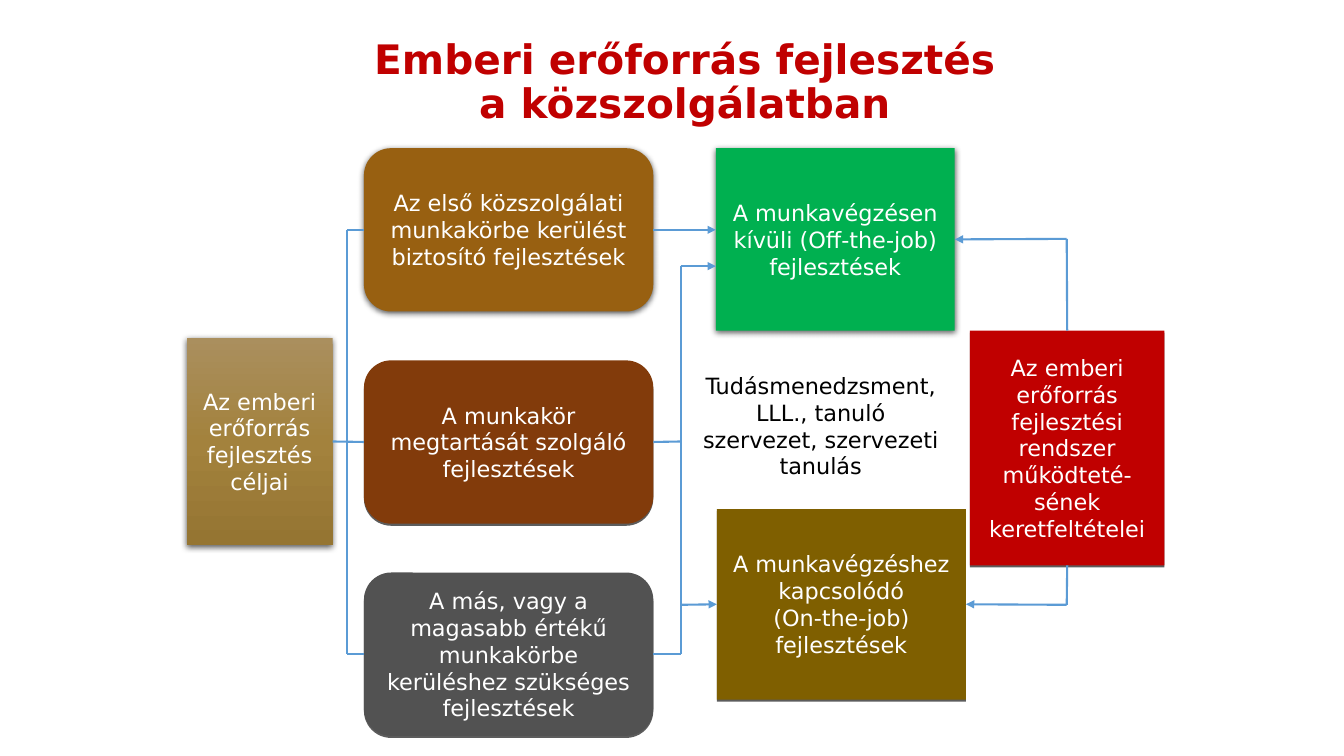
from lxml import etree
from pptx import Presentation
from pptx.dml.color import RGBColor
from pptx.enum import shapes, text
from pptx.oxml import ns
from pptx.util import Inches, Pt

FONT = "DejaVu Sans"
WHITE, BLACK, RED, BLUE = "FFFFFF", "000000", "C00000", "5B9BD5"
RECT = shapes.MSO_SHAPE.RECTANGLE
ROUNDED = shapes.MSO_SHAPE.ROUNDED_RECTANGLE
TOP, LEFT, BOTTOM, RIGHT = range(4)


def color(value):
    return RGBColor.from_string(value)


def add_child(parent, tag, **attributes):
    return etree.SubElement(parent, ns.qn(tag), attributes)


def write(shape, lines, size=16, ink=WHITE, bold=False, spacing=None,
          anchor=text.MSO_ANCHOR.MIDDLE):
    frame = shape.text_frame
    frame.word_wrap = True
    frame.vertical_anchor = anchor
    frame.text = lines
    for para in frame.paragraphs:
        para.alignment = text.PP_ALIGN.CENTER
        para.line_spacing = spacing
        para.font.name = FONT
        para.font.size = Pt(size)
        para.font.bold = bold
        para.font.color.rgb = color(ink)


def add_text(page, box, lines, **style):
    label = page.shapes.add_textbox(*map(Inches, box))
    write(label, lines, **style)


def add_shadow(shape, blur):
    effects = add_child(shape._element.spPr, "a:effectLst")
    shadow = add_child(effects, "a:outerShdw", blurRad=str(Pt(blur)), dist=str(Pt(1.5)),
                       dir="5400000", algn="ctr", rotWithShape="0")
    shade = add_child(shadow, "a:srgbClr", val=BLACK)
    add_child(shade, "a:alpha", val="63000")


def fill_gradient(shape, stops):
    """Fill from top to bottom with (percent, colour) stops."""
    shape.fill.gradient()
    shape.fill.gradient_angle = 270
    stop_list = shape._element.spPr.find(".//" + ns.qn("a:gsLst"))
    for stop in list(stop_list):
        stop_list.remove(stop)
    for percent, value in stops:
        stop = add_child(stop_list, "a:gs", pos=str(percent * 1000))
        add_child(stop, "a:srgbClr", val=value)


def add_card(page, box, lines, fill, kind=RECT, blur=0):
    card = page.shapes.add_shape(kind, *map(Inches, box))
    if isinstance(fill, str):
        card.fill.solid()
        card.fill.fore_color.rgb = color(fill)
    else:
        fill_gradient(card, fill)
    card.line.fill.background()
    add_shadow(card, blur)
    write(card, lines)
    return card


def add_line(page, start, end, arrow=False):
    """Draw a line between ends that are (x, y) points or (card, side) pairs."""
    line = page.shapes.add_connector(shapes.MSO_CONNECTOR.STRAIGHT, 0, 0, 0, 0)
    if isinstance(start[0], (int, float)):
        line.begin_x, line.begin_y = map(Inches, start)
    else:
        line.begin_connect(*start)
    if isinstance(end[0], (int, float)):
        line.end_x, line.end_y = map(Inches, end)
    else:
        line.end_connect(*end)
    line.line.color.rgb = color(BLUE)
    line.line.width = Pt(1.5)
    if arrow:
        add_child(line.line._get_or_add_ln(), "a:tailEnd", type="triangle")
    add_child(line._element.spPr, "a:effectLst")


def add_goals(page, box):
    stops = [(0, "AA8F5E"), (50, "A3823D"), (100, "957532")]
    return add_card(page, box, "Az emberi erőforrás fejlesztés céljai", stops, blur=4.5)


def add_careers(page, box):
    """Stack the three career stages evenly in the box."""
    left, top, width, height = box
    card_height = 1.62
    step = (height - card_height) / 2
    stages = [
        ("Az első közszolgálati munkakörbe kerülést biztosító fejlesztések", "986011", 4.5),
        ("A munkakör megtartását szolgáló fejlesztések", "823B0B", 0),
        ("A más, vagy a magasabb értékű munkakörbe kerüléshez szükséges fejlesztések",
         "525252", 0),
    ]
    return [add_card(page, (left, top + row * step, width, card_height), lines, fill,
                     ROUNDED, blur)
            for row, (lines, fill, blur) in enumerate(stages)]


def add_training(page, box):
    """Place off-the-job training on top, on-the-job below, and the note between."""
    left, top, width, height = box
    off_job = add_card(page, (left, top, 2.37, 1.81),
                       "A munkavégzésen kívüli (Off-the-job) fejlesztések", "00B050", blur=4.5)
    on_job = add_card(page, (left + 0.01, top + height - 1.89, width - 0.01, 1.89),
                      "A munkavégzéshez kapcsolódó\n(On-the-job) fejlesztések", "7F5F00")
    add_text(page, (left - 0.27, top + 2.17, 2.62, 1.18),
             "Tudásmenedzsment, LLL., tanuló szervezet, szervezeti tanulás",
             ink=BLACK, anchor=text.MSO_ANCHOR.TOP)
    return off_job, on_job


def add_conditions(page, box):
    return add_card(page, box, "Az emberi erőforrás fejlesztési rendszer "
                    "működteté-sének keretfeltételei", RED)


def link_goals(page, goals, careers):
    trunk, first_y, last_y = 3.44, 2.28, 6.49
    first, middle, last = careers
    add_line(page, (trunk, first_y), (trunk, last_y))
    add_line(page, (goals, RIGHT), (middle, LEFT))
    add_line(page, (trunk, first_y), (first, LEFT))
    add_line(page, (trunk, last_y), (last, LEFT))


def link_training(page, careers, on_job):
    trunk, entry_y, edge = 6.75, 2.64, 7.1
    first, middle, last = careers
    add_line(page, (first, RIGHT), (edge, 2.28), arrow=True)
    add_line(page, (trunk, entry_y), (trunk, 6.49))
    add_line(page, (trunk, entry_y), (edge, entry_y), arrow=True)
    add_line(page, (trunk, 6), (on_job, LEFT), arrow=True)
    add_line(page, (middle, RIGHT), (trunk, 4.38))
    add_line(page, (last, RIGHT), (trunk, 6.49))


def link_conditions(page, conditions, off_job, on_job):
    for side, target, corner in [(TOP, off_job, (10.58, 2.37)), (BOTTOM, on_job, (10.58, 6))]:
        add_line(page, (conditions, side), corner)
        add_line(page, corner, (target, RIGHT), arrow=True)


def main():
    deck = Presentation()
    deck.slide_width, deck.slide_height = Inches(13.33), Inches(7.5)
    page = deck.slides.add_slide(deck.slide_layouts[6])
    add_text(page, (3.44, 0.27, 6.71, 1.11), "Emberi erőforrás fejlesztés a közszolgálatban",
             size=29, ink=RED, bold=True, spacing=0.9)
    goals = add_goals(page, (1.85, 3.35, 1.45, 2.06))
    careers = add_careers(page, (3.61, 1.47, 2.87, 5.83))
    off_job, on_job = add_training(page, (7.1, 1.47, 2.48, 5.47))
    conditions = add_conditions(page, (9.62, 3.28, 1.93, 2.33))
    link_goals(page, goals, careers)
    link_training(page, careers, on_job)
    link_conditions(page, conditions, off_job, on_job)
    deck.save("out.pptx")


if __name__ == "__main__":
    main()
